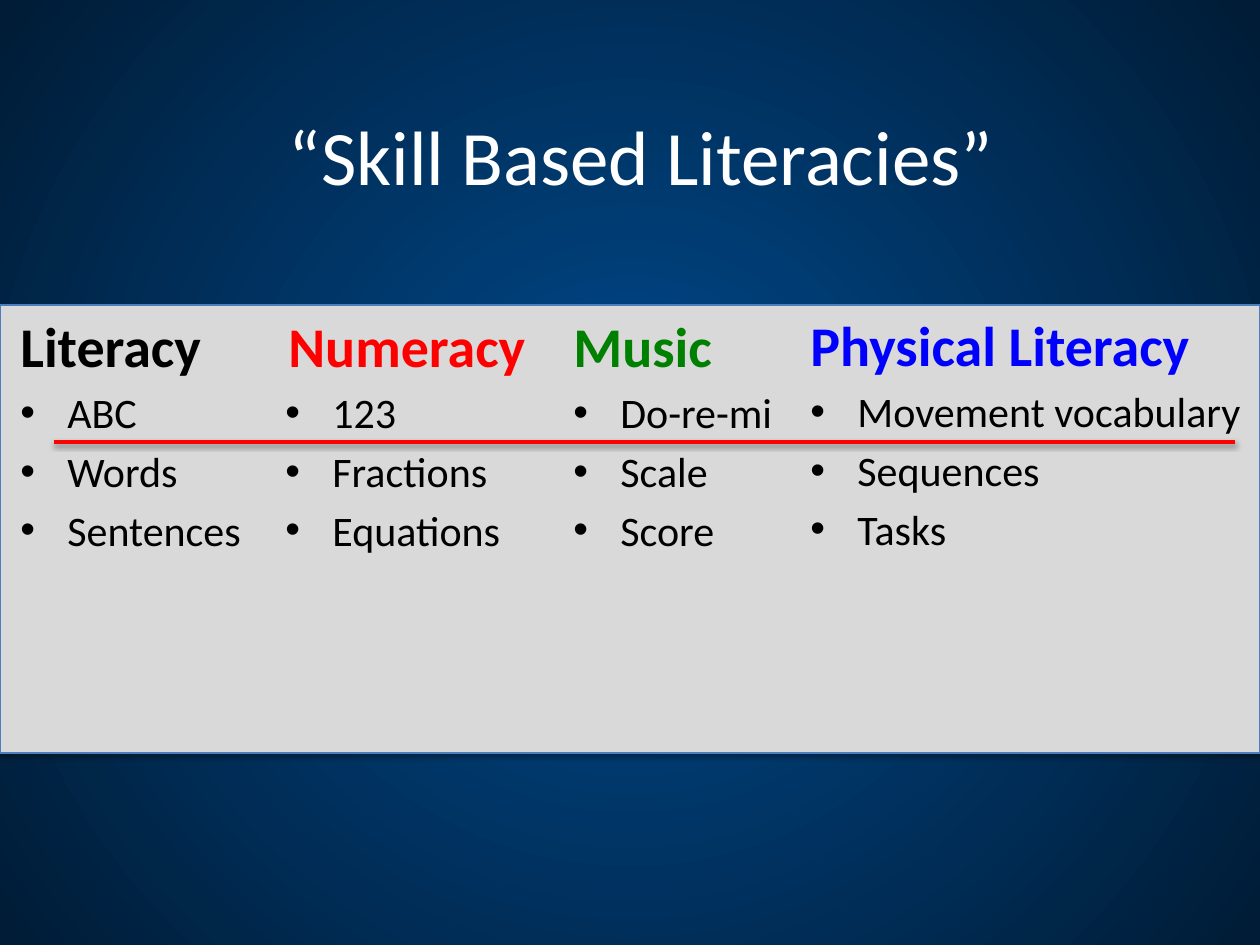
from lxml import etree
from pptx import Presentation
from pptx.dml.color import RGBColor
from pptx.enum import shapes, text
from pptx.oxml import parse_xml
from pptx.oxml.ns import nsdecls, qn
from pptx.util import Pt

BLACK, WHITE = RGBColor(0, 0, 0), RGBColor(255, 255, 255)
RED, GREEN, BLUE = RGBColor(255, 0, 0), RGBColor(0, 128, 0), RGBColor(0, 0, 255)
PANEL, PANEL_EDGE = RGBColor(0xD9, 0xD9, 0xD9), RGBColor(0x4B, 0x7E, 0xBC)
GLOW, NIGHT = RGBColor(0x00, 0x4A, 0x8E), RGBColor(0x00, 0x1C, 0x36)
LEFT, CENTER = text.PP_ALIGN.LEFT, text.PP_ALIGN.CENTER

TITLE = "“Skill Based Literacies”"
# heading, colour, alignment, (left, top, width), items
COLUMNS = [
    ("Literacy", BLACK, LEFT, (8, 305, 285), ["ABC", "Words", "Sentences"]),
    ("Numeracy", RED, CENTER, (273, 305, 268), ["123", "Fractions", "Equations"]),
    ("Music", GREEN, LEFT, (561, 305, 228), ["Do-re-mi", "Scale", "Score"]),
    ("Physical Literacy", BLUE, LEFT, (798, 304, 462),
     ["Movement vocabulary", "Sequences", "Tasks"]),
]
COLUMN_HEIGHT = 539
INDENT = 47


def px(*values):
    return [round(v * 914400 / 126) for v in values]


def shadow(blur, dist, angle, alpha):
    return parse_xml(
        f'<a:effectLst {nsdecls("a")}><a:outerShdw blurRad="{Pt(blur)}" dist="{Pt(dist)}" '
        f'dir="{angle * 60000}" rotWithShape="0"><a:srgbClr val="000000">'
        f'<a:alpha val="{alpha * 1000}"/></a:srgbClr></a:outerShdw></a:effectLst>')


def write(p, words, color, **font):
    r = p.add_run()
    r.text = words
    for name, value in {"name": "Calibri", **font}.items():
        setattr(r.font, name, value)
    r.font.color.rgb = color
    return r


def space_before(p, percent):
    spacing = etree.SubElement(p._p.get_or_add_pPr(), qn("a:spcBef"))
    etree.SubElement(spacing, qn("a:spcPct"), val=str(percent * 1000))


def add_bullet(p):
    pPr = p._p.get_or_add_pPr()
    indent = px(INDENT)[0]
    pPr.set("marL", str(indent))
    pPr.set("indent", str(-indent))
    etree.SubElement(pPr, qn("a:buFont"), typeface="Arial")
    etree.SubElement(pPr, qn("a:buChar"), char="•")


def paint_background(slide):
    fill = slide.background.fill
    fill.gradient()
    for stop, color in zip(fill.gradient_stops, (GLOW, NIGHT)):
        stop.color.rgb = color
    lin = slide._element.find(".//" + qn("a:lin"))
    circle = parse_xml(f'<a:path {nsdecls("a")} path="circle">'
                       '<a:fillToRect l="50000" t="50000" r="50000" b="50000"/></a:path>')
    lin.getparent().replace(lin, circle)


def add_title(slide):
    sp = slide.shapes.title
    sp.left, sp.top, sp.width, sp.height = px(65, 96, 1153, 118)
    tf = sp.text_frame
    tf.vertical_anchor = text.MSO_ANCHOR.MIDDLE
    p = tf.paragraphs[0]
    p.alignment = CENTER
    r = write(p, TITLE, WHITE, size=Pt(44))
    r._r.rPr.find(qn("a:solidFill")).addnext(shadow(4, 3, 45, 60))


def add_panel(slide):
    sp = slide.shapes.add_shape(shapes.MSO_SHAPE.RECTANGLE, *px(0, 305, 1260, 448))
    sp.fill.solid()
    sp.fill.fore_color.rgb = PANEL
    sp.line.color.rgb = PANEL_EDGE
    sp.line.width = Pt(0.75)
    sp._element.spPr.append(shadow(3.1, 1.8, 90, 35))


def add_column(slide, heading, color, align, place, items):
    tf = slide.shapes.add_textbox(*px(*place, COLUMN_HEIGHT)).text_frame
    tf.word_wrap = True
    p = tf.paragraphs[0]
    p.alignment = align
    space_before(p, 20)
    write(p, heading, color, size=Pt(32), bold=True)
    for item in items:
        p = tf.add_paragraph()
        space_before(p, 20)
        add_bullet(p)
        write(p, item, BLACK, size=Pt(24))


def add_rule(slide):
    line = slide.shapes.add_connector(shapes.MSO_CONNECTOR.STRAIGHT, *px(54, 442, 1235, 442))
    line.line.color.rgb = RED
    line.line.width = Pt(2)
    line._element.spPr.append(shadow(3.1, 1.6, 90, 38))


def main():
    prs = Presentation()
    prs.slide_width, prs.slide_height = px(1260, 945)
    slide = prs.slides.add_slide(prs.slide_layouts[5])
    paint_background(slide)
    add_title(slide)
    add_panel(slide)
    for column in COLUMNS:
        add_column(slide, *column)
    add_rule(slide)
    prs.save("out.pptx")


if __name__ == "__main__":
    main()
